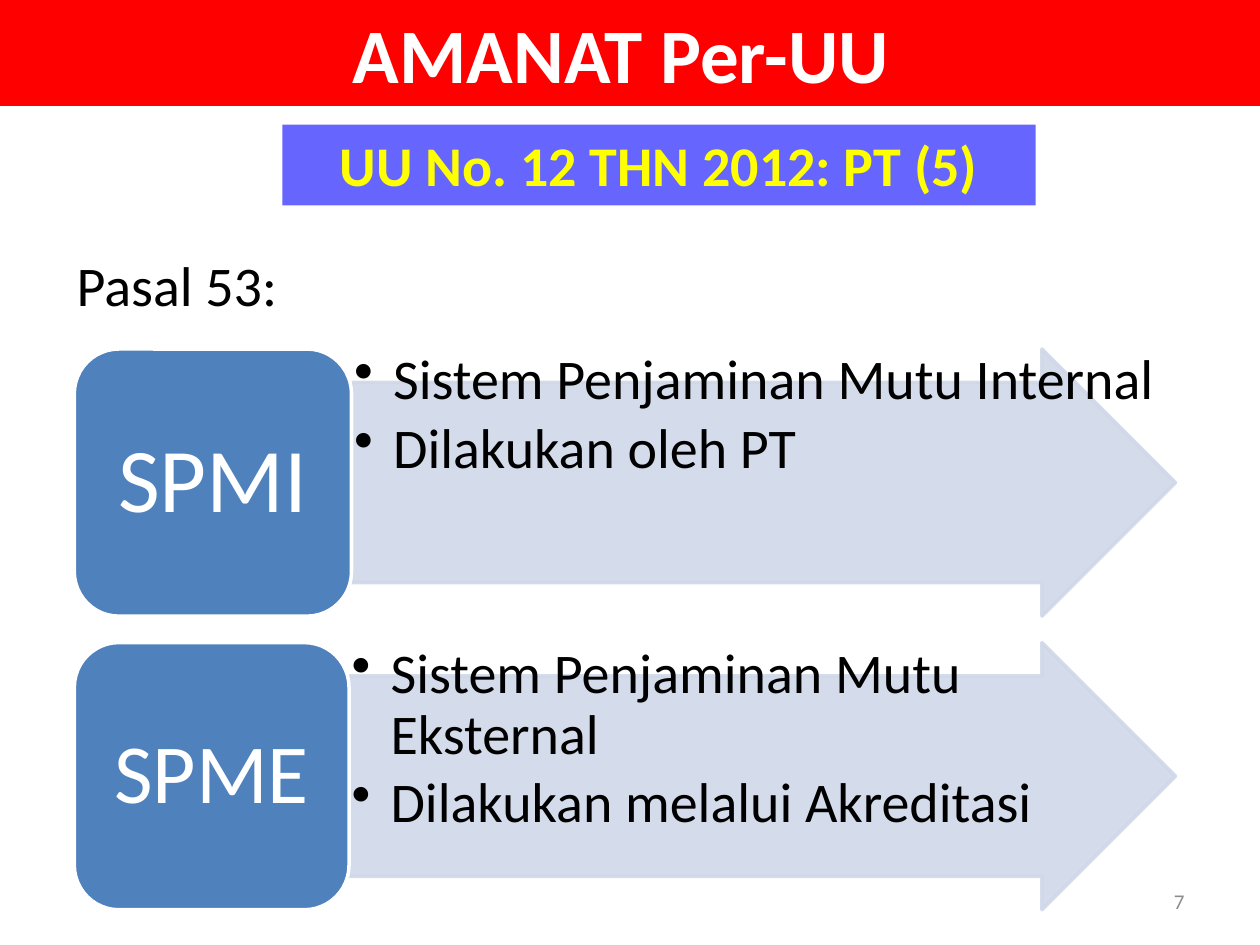
from lxml import etree
from pptx import Presentation
from pptx.dml.color import RGBColor
from pptx.enum.shapes import MSO_SHAPE
from pptx.enum.text import MSO_ANCHOR, PP_ALIGN
from pptx.oxml.ns import qn
from pptx.util import Inches, Pt

RECT, ROUND, ARROW = MSO_SHAPE.RECTANGLE, MSO_SHAPE.ROUNDED_RECTANGLE, MSO_SHAPE.RIGHT_ARROW
LEFT, CENTER, RIGHT = PP_ALIGN.LEFT, PP_ALIGN.CENTER, PP_ALIGN.RIGHT
TOP, MIDDLE = MSO_ANCHOR.TOP, MSO_ANCHOR.MIDDLE

FONT = "Calibri"
COLORS = {
    "red": "FF0000", "violet": "6666FF", "yellow": "FFFF00", "white": "FFFFFF",
    "black": "000000", "gray": "8C8C8C", "blue": "4F81BD", "pale": "D0D8E8",
}


def rgb(name):
    return RGBColor.from_string(COLORS[name])


def add_run(p, text, size, color, bold=False):
    r = p.add_run()
    r.text = text
    r.font.name, r.font.size, r.font.bold = FONT, Pt(size), bold
    r.font.color.rgb = rgb(color)


def set_alpha(color_format_parent, percent):
    """Make every solid colour below the given element partly opaque."""
    for clr in color_format_parent.iter(qn("a:srgbClr")):
        etree.SubElement(clr, qn("a:alpha")).set("val", str(percent * 1000))


def add_block(s, kind, box, fill, line=None):
    sp = s.shapes.add_shape(kind, *map(Inches, box))
    sp.shadow.inherit = False
    sp.fill.solid()
    sp.fill.fore_color.rgb = rgb(fill)
    if line:
        sp.line.color.rgb = rgb(line)
        sp.line.width = Pt(2)
    else:
        sp.line.fill.background()
    return sp


def set_frame(sp, anchor=TOP, inset=None):
    tf = sp.text_frame
    tf.word_wrap = True
    tf.vertical_anchor = anchor
    if inset is not None:
        tf.margin_left = tf.margin_right = Inches(inset)
        tf.margin_top = tf.margin_bottom = Inches(inset)
    return tf


def add_banner(s, box, text, size, fill, color):
    tf = set_frame(add_block(s, RECT, box, fill))
    p = tf.paragraphs[0]
    p.alignment = CENTER
    add_run(p, text, size, color, bold=True)


def add_label(s, box, text, size, color, align=LEFT, anchor=TOP):
    tf = set_frame(s.shapes.add_textbox(*map(Inches, box)), anchor)
    p = tf.paragraphs[0]
    p.alignment = align
    add_run(p, text, size, color)


def add_bullet(p):
    pPr = p._p.get_or_add_pPr()
    pPr.set("marL", str(Inches(0.31)))
    pPr.set("indent", str(-Inches(0.31)))
    etree.SubElement(pPr, qn("a:buChar")).set("char", "•")


def add_system_row(s, box, tile_w, name, size, points):
    """A rounded tile with an arrow leading right from it, bulleted on top."""
    x, y, w, h = box
    arrow_box = (x + tile_w, y, w - tile_w, h)
    arrow = add_block(s, ARROW, arrow_box, "pale", "pale")
    arrow.adjustments[0], arrow.adjustments[1] = 0.75, 0.5
    set_alpha(arrow._element.spPr, 90)

    tf = set_frame(s.shapes.add_textbox(*map(Inches, arrow_box)), inset=0.02)
    for i, point in enumerate(points):
        p = tf.add_paragraph() if i else tf.paragraphs[0]
        p.line_spacing = 0.9
        p.space_after = Pt(4.8)
        add_bullet(p)
        add_run(p, point, 32, "black")

    tile = add_block(s, ROUND, (x, y, tile_w, h), "blue", "white")
    p = set_frame(tile, MIDDLE, 0).paragraphs[0]
    p.alignment = CENTER
    p.line_spacing = 0.9
    add_run(p, name, size, "white")


def main():
    prs = Presentation()
    prs.slide_width, prs.slide_height = Inches(10), Inches(7.5)
    s = prs.slides.add_slide(prs.slide_layouts[6])

    add_banner(s, (0, 0, 10, 0.84), "AMANAT Per-UU ", 44, "red", "white")
    add_banner(s, (2.24, 0.99, 5.98, 0.64), "UU No. 12 THN 2012: PT (5)", 32, "violet", "yellow")
    add_label(s, (0.51, 1.94, 5.67, 0.64), "Pasal 53:", 32, "black")
    add_label(s, (7.17, 6.95, 2.33, 0.4), "7", 12, "gray", RIGHT, MIDDLE)

    systems = [
        ("SPMI", 52, 2.2, ["Sistem Penjaminan Mutu Internal", "Dilakukan oleh PT"]),
        ("SPME", 48, 2.18, ["Sistem Penjaminan Mutu Eksternal", "Dilakukan melalui Akreditasi"]),
    ]
    for i, (name, size, tile_w, points) in enumerate(systems):
        add_system_row(s, (0.59, 2.77 + i * 2.33, 8.74, 2.12), tile_w, name, size, points)

    prs.save("out.pptx")


if __name__ == "__main__":
    main()
